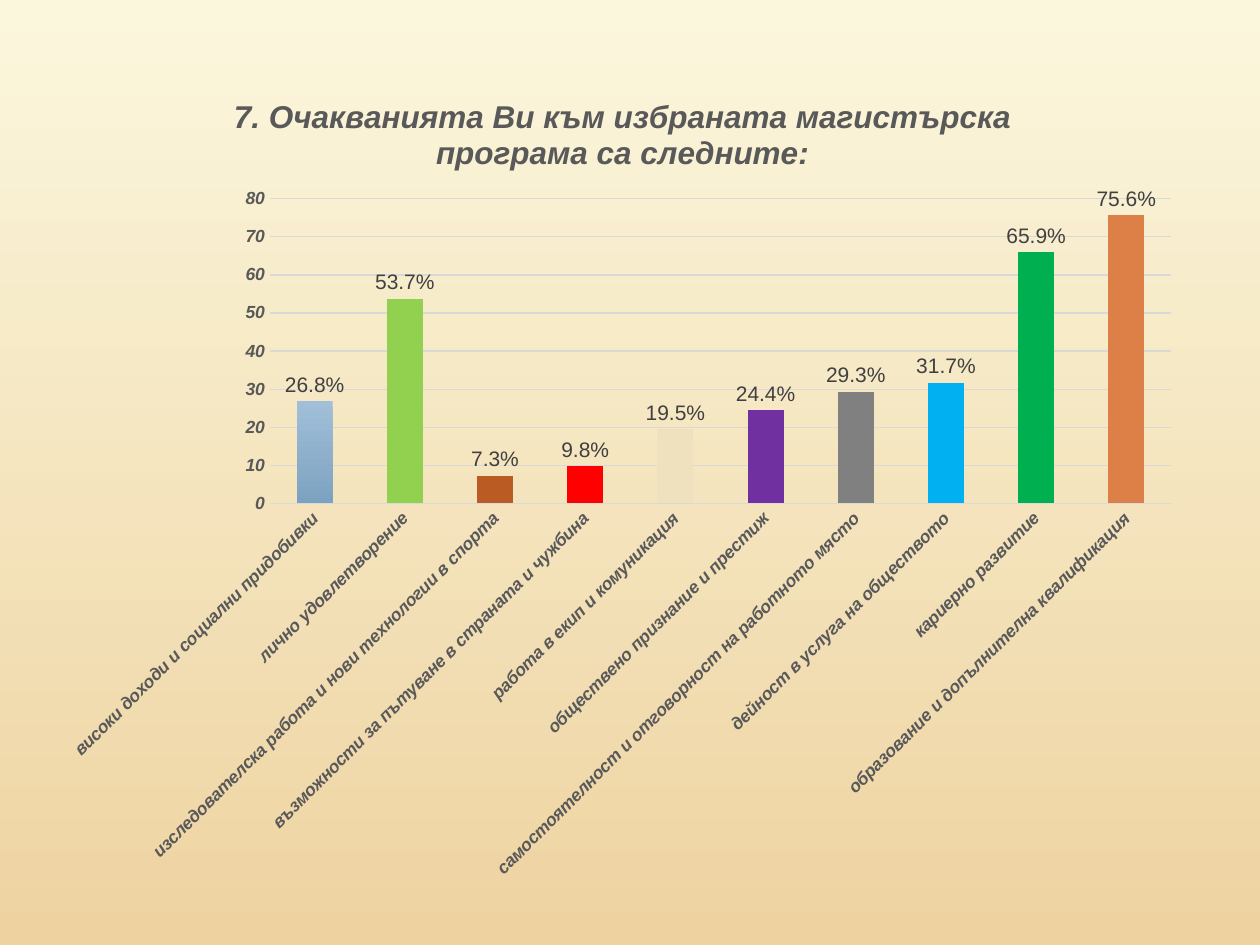
from lxml import etree
from pptx import Presentation
from pptx.chart.data import CategoryChartData
from pptx.dml.color import RGBColor
from pptx.enum.chart import XL_CHART_TYPE, XL_LABEL_POSITION, XL_TICK_MARK
from pptx.oxml.ns import qn
from pptx.util import Cm, Pt

COLUMNS = XL_CHART_TYPE.COLUMN_CLUSTERED
OUTSIDE_END = XL_LABEL_POSITION.OUTSIDE_END
NO_TICK = XL_TICK_MARK.NONE


def paint(color_format, value):
    color_format.rgb = RGBColor.from_string(value)


def place(element, **fractions):
    layout = element.find(qn("c:layout"))
    if layout is None:
        layout = etree.Element(qn("c:layout"))
        element.insert(0, layout)
    manual = etree.SubElement(layout, qn("c:manualLayout"))
    if "w" in fractions:
        etree.SubElement(manual, qn("c:layoutTarget")).set("val", "inner")
    for side in ("xMode", "yMode"):
        etree.SubElement(manual, qn("c:" + side)).set("val", "edge")
    for name, fraction in fractions.items():
        etree.SubElement(manual, qn("c:" + name)).set("val", str(fraction))


expectations = [
    ("високи доходи и социални придобивки", 26.8, None),
    ("лично удовлетворение", 53.7, "92D050"),
    ("изследователска работа и нови технологии в спорта", 7.3, "B95B22"),
    ("възможности за пътуване в страната и чужбина", 9.8, "FF0000"),
    ("работа в екип и комуникация", 19.5, "EFE0BE"),
    ("обществено признание и престиж", 24.4, "7030A0"),
    ("самостоятелност и отговорност на работното място", 29.3, "808080"),
    ("дейност в услуга на обществото", 31.7, "00B0F0"),
    ("кариерно развитие", 65.9, "00B050"),
    ("образование и допълнителна квалификация", 75.6, "DD8047"),
]

presentation = Presentation()
presentation.slide_width = Cm(25.4)
presentation.slide_height = Cm(19.05)
slide = presentation.slides.add_slide(presentation.slide_layouts[6])

chart_data = CategoryChartData()
chart_data.categories = [name for name, share, color in expectations]
chart_data.add_series("Series 1", [share for name, share, color in expectations])
chart = slide.shapes.add_chart(
    COLUMNS, Cm(0.89), Cm(1.32), Cm(23.19), Cm(16.79), chart_data
).chart
chart.has_legend = False
chart.font.name = "Arial"
chart.font.size = Pt(10)

chart.has_title = True
title = chart.chart_title
title.include_in_layout = False
paragraph = title.text_frame.paragraphs[0]
paragraph.text = "7. Очакванията Ви към избраната магистърска програма са следните:"
title_font = paragraph.runs[0].font
title_font.size = Pt(18)
place(title._element, x=0.16, y=0.03)
place(chart._chartSpace.chart.plotArea, x=0.196, y=0.16, w=0.784, h=0.366)

category_axis = chart.category_axis
value_axis = chart.value_axis
for axis in (category_axis, value_axis):
    axis.major_tick_mark = NO_TICK
    axis.minor_tick_mark = NO_TICK
    axis.tick_labels.font.size = Pt(10)
for font in (title_font, category_axis.tick_labels.font, value_axis.tick_labels.font):
    font.name = "Arial"
    font.bold = True
    font.italic = True
    paint(font.color, "595959")

category_axis._element.txPr.find(qn("a:bodyPr")).set("rot", "-2700000")
category_axis.format.line.width = Pt(1)
paint(category_axis.format.line.color, "D9D9D9")
value_axis.minimum_scale = 0
value_axis.maximum_scale = 80
value_axis.major_unit = 10
value_axis.format.line.fill.background()
gridlines = value_axis.major_gridlines.format.line
gridlines.width = Pt(0.75)
paint(gridlines.color, "D9D9D9")

plot = chart.plots[0]
plot.gap_width = 150
plot.vary_by_categories = False
plot.has_data_labels = True
labels = plot.data_labels
labels.show_value = True
labels.number_format = '0.0"%"'
labels.number_format_is_linked = False
labels.position = OUTSIDE_END
labels.font.name = "Arial"
labels.font.size = Pt(12)
labels.font.bold = False
paint(labels.font.color, "404040")

series = plot.series[0]
gradients = [
    (slide.background.fill, ("FBF7DD", "EED3A1")),
    (series.format.fill, ("A1BFD8", "7DA2C1")),
]
for fill, colors in gradients:
    fill.gradient()
    fill.gradient_angle = 270
    for stop, color, position in zip(fill.gradient_stops, colors, (0, 1)):
        paint(stop.color, color)
        stop.position = position

for index, (name, share, color) in enumerate(expectations):
    if color:
        fill = series.points[index].format.fill
        fill.solid()
        paint(fill.fore_color, color)

presentation.save("out.pptx")
